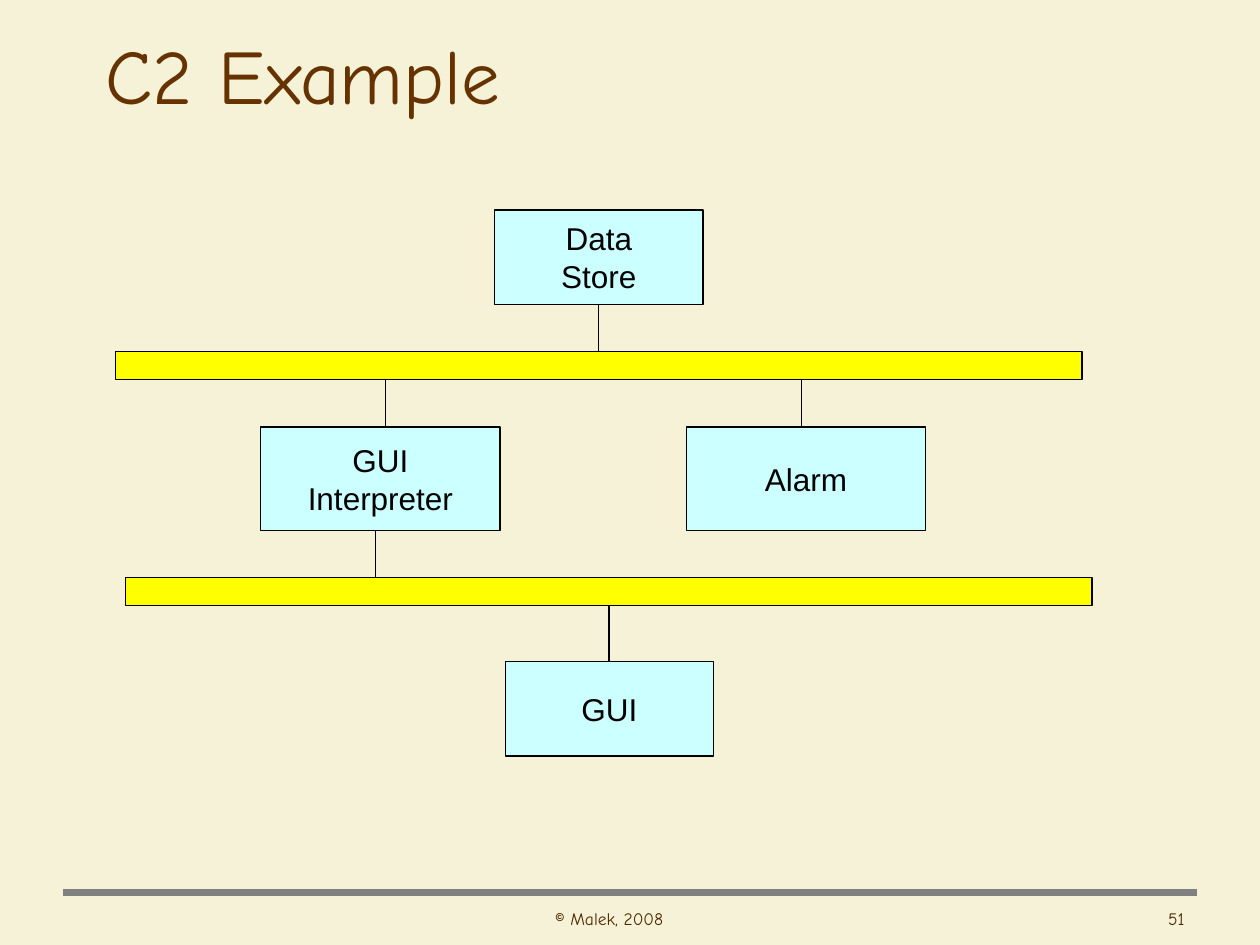
from dataclasses import dataclass
from lxml.etree import SubElement
from pptx import Presentation
from pptx.dml.color import RGBColor
from pptx.enum.shapes import MSO_CONNECTOR, MSO_SHAPE
from pptx.enum.text import MSO_ANCHOR, PP_ALIGN
from pptx.oxml.ns import qn
from pptx.slide import Slide
from pptx.util import Pt

COLORS = {
    "background": "F5F2D8",
    "title": "663300",
    "footer": "502800",
    "rule": "808080",
    "component": "CCFFFF",
    "connector": "FFFF00",
    "ink": "000000",
}


def rgb(name):
    return RGBColor.from_string(COLORS[name])


@dataclass
class Diagram:
    slide: Slide
    text_font: str = "Comic Neue"
    box_font: str = "Arial"
    box_size: float = 18
    outline: float = 0.75

    def background(self):
        fill = self.slide.background.fill
        fill.solid()
        fill.fore_color.rgb = rgb("background")

    def set_lines(self, frame, lines, font, size, color, align):
        for i, line in enumerate(lines):
            paragraph = frame.paragraphs[0] if i == 0 else frame.add_paragraph()
            paragraph.text = line
            paragraph.alignment = align
            paragraph.font.name = font
            paragraph.font.size = Pt(size)
            paragraph.font.color.rgb = rgb(color)

    def label(self, text, area, size, color, align, anchor=MSO_ANCHOR.TOP):
        frame = self.slide.shapes.add_textbox(*map(Pt, area)).text_frame
        frame.word_wrap = True
        frame.vertical_anchor = anchor
        self.set_lines(frame, [text], self.text_font, size, color, align)

    def box(self, area, color, lines=()):
        shape = self.slide.shapes.add_shape(MSO_SHAPE.RECTANGLE, *map(Pt, area))
        shape.shadow.inherit = False
        shape.fill.solid()
        shape.fill.fore_color.rgb = rgb(color)
        shape.line.color.rgb = rgb("ink")
        shape.line.width = Pt(self.outline)
        frame = shape.text_frame
        frame.word_wrap = False
        frame.vertical_anchor = MSO_ANCHOR.MIDDLE
        self.set_lines(frame, lines, self.box_font, self.box_size, "ink", PP_ALIGN.CENTER)

    def line(self, x1, y1, x2, y2, color="ink", width=None):
        line = self.slide.shapes.add_connector(
            MSO_CONNECTOR.STRAIGHT, Pt(x1), Pt(y1), Pt(x2), Pt(y2))
        line.line.color.rgb = rgb(color)
        line.line.width = Pt(width or self.outline)
        SubElement(line._element.spPr, qn("a:effectLst"))


def main():
    deck = Presentation()
    deck.slide_width, deck.slide_height = Pt(720), Pt(540)
    diagram = Diagram(deck.slides.add_slide(deck.slide_layouts[6]))
    diagram.background()
    diagram.line(36, 510, 684, 510, "rule", 4.5)
    diagram.label("C2 Example", (53.3, 12.2, 643, 60), 44, "title",
                  PP_ALIGN.LEFT, MSO_ANCHOR.MIDDLE)

    outer, inner = (119, 54), (136.8, 59)
    components = [
        (282.7, 120, outer, ["Data", "Store"]),
        (288.7, 378, outer, ["GUI"]),
        (149, 244, inner, ["GUI", "Interpreter"]),
        (392.2, 244, inner, ["Alarm"]),
    ]
    for left, top, size, lines in components:
        diagram.box((left, top, *size), "component", lines)

    for left, top in [(66, 201), (71.8, 330)]:
        diagram.box((left, top, 552.3, 16), "connector")

    links = [(342, 174, 201), (220.4, 217, 244), (457.9, 217, 244),
             (214.5, 303, 330), (348, 346, 378)]
    for x, top, bottom in links:
        diagram.line(x, top, x, bottom)

    diagram.label("© Malek, 2008", (264, 515.5, 168, 24), 10, "footer", PP_ALIGN.CENTER)
    diagram.label("51", (432, 515.5, 252, 24), 10, "footer", PP_ALIGN.RIGHT)
    deck.save("out.pptx")


if __name__ == "__main__":
    main()
